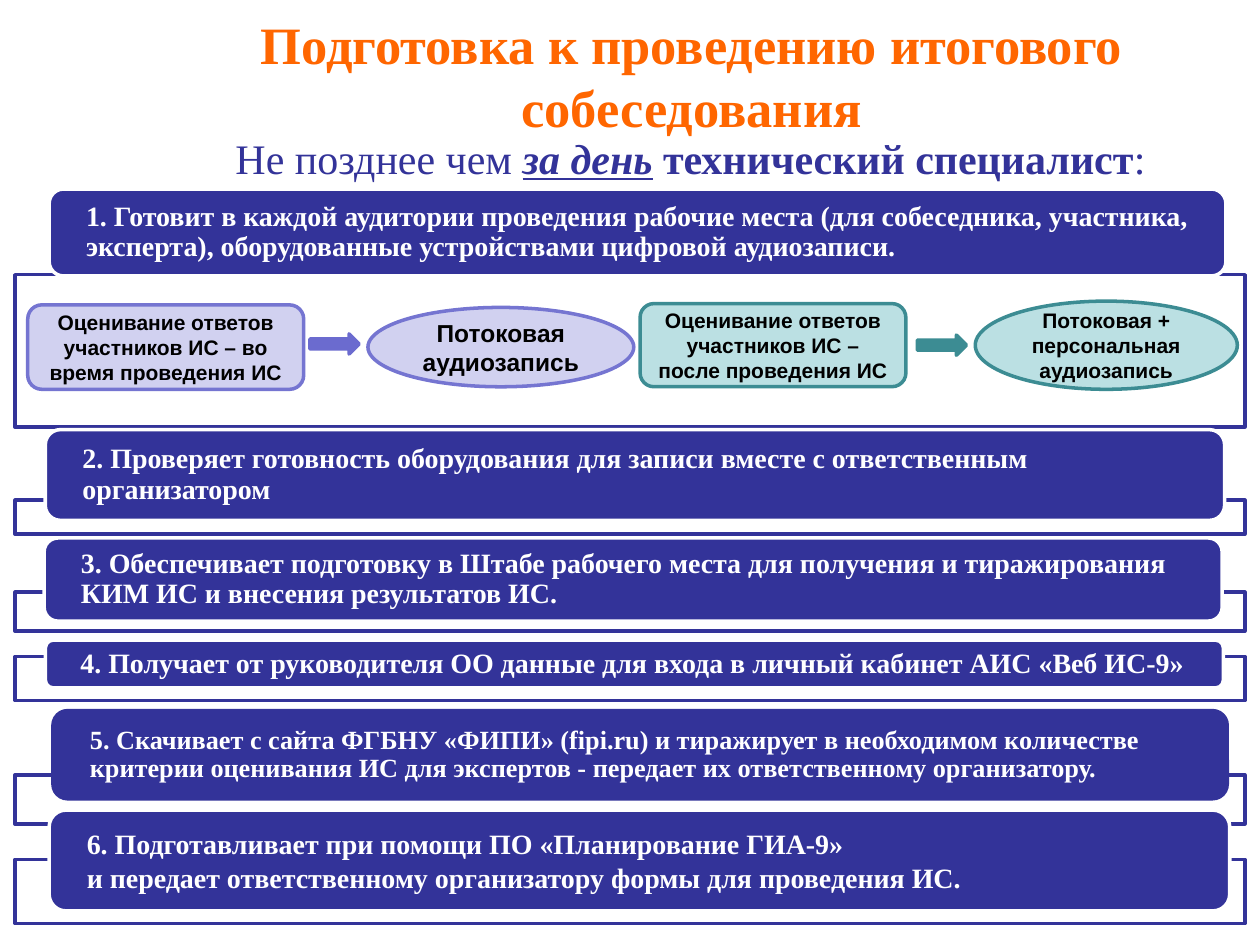
"""Build the slide on preparing for the final interview."""
from pptx import Presentation
from pptx.dml.color import RGBColor
from pptx.enum.shapes import MSO_SHAPE
from pptx.enum.text import MSO_ANCHOR, PP_ALIGN
from pptx.util import Inches, Pt

NAVY = RGBColor(0x33, 0x33, 0x99)
WHITE = RGBColor(0xFF, 0xFF, 0xFF)
BLACK = RGBColor(0, 0, 0)
ORANGE = RGBColor(0xFF, 0x66, 0x00)
LILAC = RGBColor(0xD1, 0xD1, 0xF0)
VIOLET = RGBColor(0x75, 0x75, 0xD1)
INDIGO = RGBColor(0x6B, 0x6B, 0xCF)
AQUA = RGBColor(0xBB, 0xE0, 0xE3)
TEAL = RGBColor(0x3C, 0x8C, 0x93)
SERIF = "Times New Roman"
RECT, ROUND = MSO_SHAPE.RECTANGLE, MSO_SHAPE.ROUNDED_RECTANGLE
OVAL, ARROW = MSO_SHAPE.OVAL, MSO_SHAPE.RIGHT_ARROW

deck = Presentation()
deck.slide_width, deck.slide_height = Inches(10), Inches(7.5)
slide = deck.slides.add_slide(deck.slide_layouts[6])


def draw(kind, box, fill, line):
    shape = slide.shapes.add_shape(kind, *map(Inches, box))
    shape.shadow.inherit = False
    shape.fill.solid()
    shape.fill.fore_color.rgb = fill
    shape.line.color.rgb = line
    shape.line.width = Pt(2)
    return shape


def write(shape, lines, face, size, color, align, space=1.0, side=0.1, edge=0.05):
    frame = shape.text_frame
    layout = dict(word_wrap=True, vertical_anchor=MSO_ANCHOR.MIDDLE,
                  margin_left=Inches(side), margin_right=Inches(side),
                  margin_top=Inches(edge), margin_bottom=Inches(edge))
    for key, value in layout.items():
        setattr(frame, key, value)
    for i, runs in enumerate(lines):
        para = frame.paragraphs[0] if i == 0 else frame.add_paragraph()
        para.alignment, para.line_spacing = align, space
        for text, extra in runs:
            run = para.add_run()
            run.text = text
            run.font.color.rgb = color
            style = dict(name=face, size=Pt(size), bold=True) | extra
            for key, value in style.items():
                setattr(run.font, key, value)


title = slide.shapes.add_textbox(*map(Inches, (0.99, -0.03, 9, 1.25)))
write(title, [[("Подготовка к проведению итогового собеседования", {})]],
      SERIF, 30, ORANGE, PP_ALIGN.CENTER)

steps = [
    ((2.18, 1.21), (0.39, 1.5, 9.34, 0.69), WHITE, 16, 0.9,
     ["1. Готовит в каждой аудитории проведения рабочие места (для собеседника, "
      "участника, эксперта), оборудованные устройствами цифровой аудиозаписи."]),
    ((3.97, 0.27), (0.36, 3.41, 9.36, 0.72), WHITE, 16, 0.9,
     ["2. Проверяет готовность оборудования для записи вместе с ответственным "
      "организатором"]),
    ((4.7, 0.31), (0.35, 4.27, 9.35, 0.66), WHITE, 16, 0.9,
     ["3. Обеспечивает подготовку в Штабе рабочего места для получения и "
      "тиражирования КИМ ИС и внесения результатов ИС."]),
    ((5.21, 0.35), (0.36, 5.08, 9.35, 0.38), WHITE, 16, 0.9,
     ["4. Получает от руководителя ОО данные для входа в личный кабинет "
      "АИС «Веб ИС-9»"]),
    ((6.15, 0.39), (0.42, 5.64, 9.32, 0.7), NAVY, 15, 0.9,
     ["5. Скачивает с сайта ФГБНУ «ФИПИ» (fipi.ru) и тиражирует в необходимом "
      "количестве критерии оценивания ИС для экспертов - передает их "
      "ответственному организатору."]),
    ((6.82, 0.51), (0.39, 6.43, 9.37, 0.8), WHITE, 16, 1.0,
     ["6. Подготавливает при помощи ПО «Планирование ГИА-9»",
      "и передает ответственному организатору формы для проведения ИС."]),
]
for (top, height), box, edge, size, space, lines in steps:
    draw(RECT, (0.12, top, 9.76, height), WHITE, NAVY)
    bar = draw(ROUND, box, NAVY, edge)
    write(bar, [[(line, {})] for line in lines], SERIF, size, WHITE,
          PP_ALIGN.LEFT, space, 0.26, 0)

lead = slide.shapes.add_textbox(*map(Inches, (1.77, 1, 8.58, 0.5)))
plain = dict(bold=False)
write(lead, [[("Не позднее чем ", plain),
              ("за день", dict(italic=True, underline=True)),
              (" ", plain), ("технический специалист", {}), (":", plain)]],
      SERIF, 24, NAVY, PP_ALIGN.LEFT)

flow = [
    (ROUND, (0.22, 2.42, 2.19, 0.67), LILAC, VIOLET, 12,
     "Оценивание ответов участников ИС – во время проведения ИС"),
    (ARROW, (2.46, 2.65, 0.39, 0.16), INDIGO, INDIGO, 12, ""),
    (OVAL, (2.92, 2.44, 2.11, 0.63), LILAC, VIOLET, 14, "Потоковая аудиозапись"),
    (ROUND, (5.08, 2.41, 2.11, 0.66), AQUA, TEAL, 12,
     "Оценивание ответов участников ИС – после проведения ИС"),
    (ARROW, (7.28, 2.66, 0.39, 0.16), TEAL, TEAL, 12, ""),
    (OVAL, (7.74, 2.39, 2.08, 0.7), AQUA, TEAL, 12,
     "Потоковая + персональная аудиозапись"),
]
for kind, box, fill, line, size, text in flow:
    node = draw(kind, box, fill, line)
    if text:
        write(node, [[(text, {})]], "Arial", size, BLACK, PP_ALIGN.CENTER)

deck.save("out.pptx")
